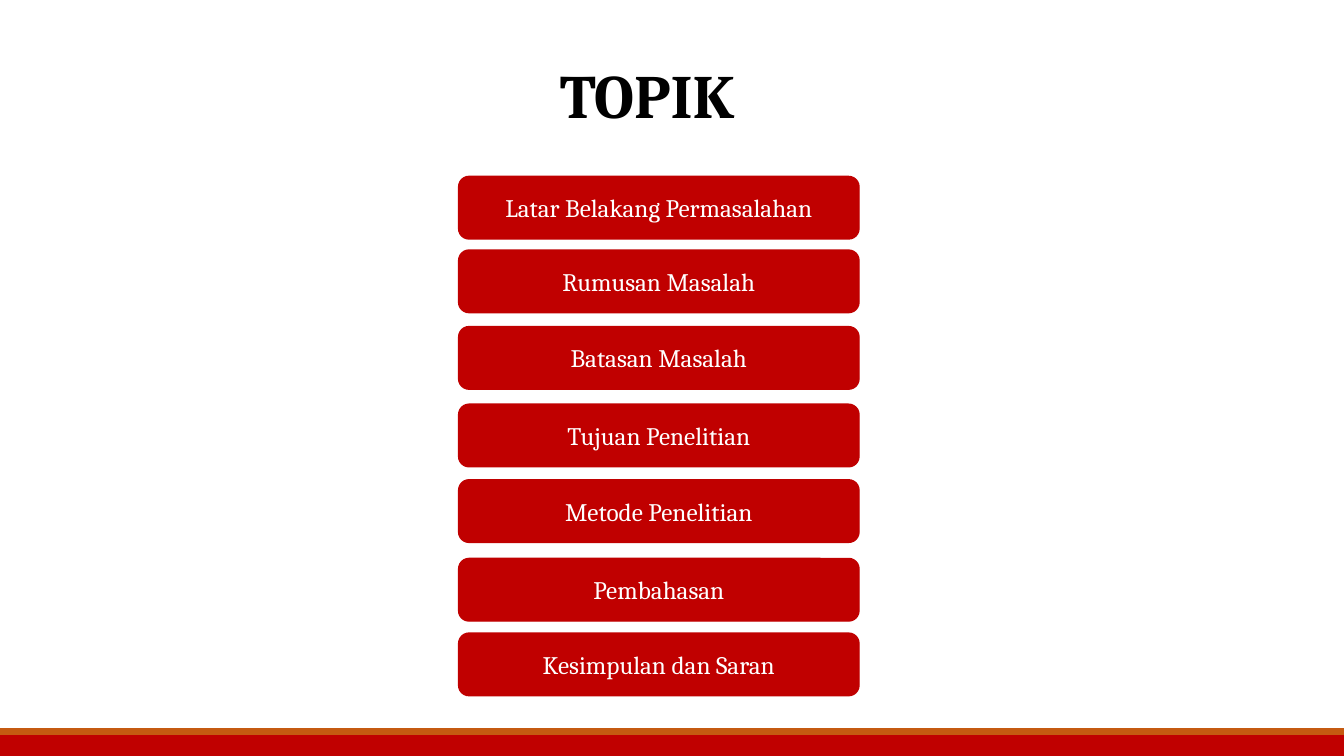
from pptx import Presentation
from pptx.dml.color import RGBColor
from pptx.enum.shapes import MSO_SHAPE
from pptx.enum.text import MSO_ANCHOR, PP_ALIGN
from pptx.util import Pt

RECT = MSO_SHAPE.RECTANGLE
ROUNDED = MSO_SHAPE.ROUNDED_RECTANGLE
MIDDLE = MSO_ANCHOR.MIDDLE
CENTER = PP_ALIGN.CENTER

COLORS = {"red": "C00000", "orange": "C55A11", "white": "FFFFFF", "black": "000000"}
FONT = "Cambria"
SLIDE_W, SLIDE_H = 960, 540

# Topic and its offset from the top of the list; the gaps vary slightly
TOPICS = [
    ("Latar Belakang Permasalahan", 0),
    ("Rumusan Masalah", 52.6),
    ("Batasan Masalah", 107.3),
    ("Tujuan Penelitian", 162.7),
    ("Metode Penelitian", 216.7),
    ("Pembahasan", 272.9),
    ("Kesimpulan dan Saran", 326.2),
]


def rgb(name):
    return RGBColor.from_string(COLORS[name])


def write_text(frame, text, *, size, color, bold=False, spacing=1.0):
    frame.word_wrap = True
    frame.vertical_anchor = MIDDLE
    paragraph = frame.paragraphs[0]
    paragraph.alignment = CENTER
    paragraph.line_spacing = spacing
    run = paragraph.add_run()
    run.text = text
    run.font.name = FONT
    run.font.size = Pt(size)
    run.font.bold = bold
    run.font.color.rgb = rgb(color)


def add_block(shapes, kind, left, top, width, height, color):
    block = shapes.add_shape(kind, Pt(left), Pt(top), Pt(width), Pt(height))
    block.shadow.inherit = False
    block.fill.solid()
    block.fill.fore_color.rgb = rgb(color)
    block.line.color.rgb = rgb(color)
    block.line.width = Pt(1)
    return block


def add_heading(slide, left, top, width, height):
    heading = slide.shapes.title
    heading.left, heading.top = Pt(left), Pt(top)
    heading.width, heading.height = Pt(width), Pt(height)
    write_text(heading.text_frame, "TOPIK", size=44, color="black", bold=True, spacing=0.9)


def add_footer(slide, left, top, width, height):
    stripe_height = 3.6
    footer = slide.shapes.add_group_shape()
    add_block(footer.shapes, RECT, left, top + stripe_height, width,
              height - stripe_height, "red")
    add_block(footer.shapes, RECT, left, top, width, stripe_height, "orange")


def add_topics(slide, left, top, width, button_height):
    for topic, offset in TOPICS:
        button = add_block(slide.shapes, ROUNDED, left, top + offset, width,
                           button_height, "red")
        write_text(button.text_frame, topic, size=18, color="white")


def main():
    deck = Presentation()
    deck.slide_width, deck.slide_height = Pt(SLIDE_W), Pt(SLIDE_H)
    slide = deck.slides.add_slide(deck.slide_layouts[5])

    # Title
    add_heading(slide, 355, 18, 214.6, 104.4)
    # Bottom band
    footer_height = 19.4
    add_footer(slide, 0, SLIDE_H - footer_height, SLIDE_W, footer_height)
    # List of topics
    add_topics(slide, 327.6, 126, 286, 44.7)

    deck.save("out.pptx")


if __name__ == "__main__":
    main()
